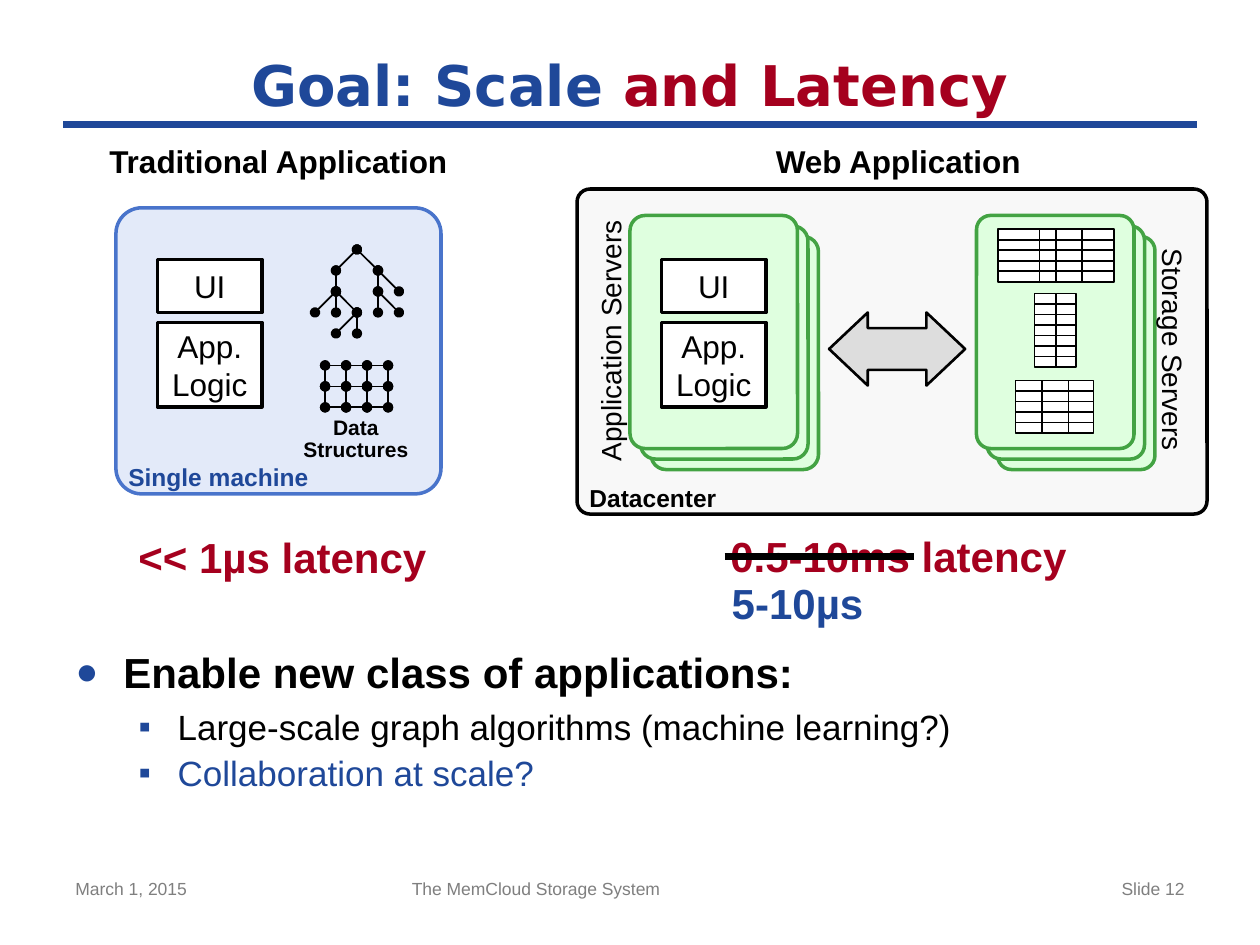
from lxml import etree
from pptx import Presentation
from pptx.dml.color import RGBColor
from pptx.enum.shapes import MSO_CONNECTOR, MSO_SHAPE
from pptx.enum.text import MSO_ANCHOR, MSO_AUTO_SIZE, PP_ALIGN
from pptx.oxml.ns import qn
from pptx.util import Inches, Pt

LINE = MSO_CONNECTOR.STRAIGHT
RECT, ROUND = MSO_SHAPE.RECTANGLE, MSO_SHAPE.ROUNDED_RECTANGLE
ARROW = MSO_SHAPE.LEFT_RIGHT_ARROW
LEFT, CENTER, RIGHT = PP_ALIGN.LEFT, PP_ALIGN.CENTER, PP_ALIGN.RIGHT
TOP, MIDDLE = MSO_ANCHOR.TOP, MSO_ANCHOR.MIDDLE

BLUE, RED, BLACK, WHITE, GREY = "1F4899", "A5001E", "000000", "FFFFFF", "7F7F7F"

# Content
TITLE = [("Goal: Scale ", BLUE), ("and Latency", RED)]
# text, level, size, bold, colour, bullet, indent, hanging, space before
BULLETS = [
    ("Enable new class of applications:", 0, 24, True, BLACK, "●", 0.38, 0.38, 6),
    ("Large-scale graph algorithms (machine learning?)", 1, 20, False, BLACK, "▪", 0.81, 0.31, 5),
    ("Collaboration at scale?", 1, 20, False, BLUE, "▪", 0.81, 0.31, 2),
]
# text, box, alignment, size, bold, colour
FOOTERS = [
    ("March 1, 2015", (0.5, 6.92, 2.33, 0.43), LEFT, 10, False, GREY),
    ("The MemCloud Storage System", (3.17, 6.92, 3.75, 0.43), LEFT, 10, False, GREY),
    ("Slide 12", (7.17, 6.92, 2.33, 0.43), RIGHT, 10, False, GREY),
]
HEADINGS = [
    ("Traditional Application", (0.75, 1.08, 2.92, 0.4), CENTER, 18, True, BLACK),
    ("Web Application", (5.76, 1.08, 2.74, 0.4), CENTER, 18, True, BLACK),
    ("<< 1µs latency", (1, 4.17, 2.49, 0.5), LEFT, 24, True, RED),
    ("0.5-10ms latency", (5.67, 4.16, 2.92, 0.5), CENTER, 24, True, RED),
]
# text, top, height
APP_PARTS = [("UI", 2.06, 0.42), ("App.\nLogic", 2.56, 0.67)]
# left, top, width, column offsets, rows
STORED_TABLES = [
    (7.92, 1.82, 0.92, (0.33, 0.46, 0.67), 5),
    (8.21, 2.33, 0.33, (0.17,), 7),
    (8.06, 3.02, 0.62, (0.21, 0.42), 5),
]
# Data structures, as (column, row) pairs on a grid
STEP = 1 / 6
TREE = [
    ((2, 0), (1, 1)), ((2, 0), (3, 1)), ((1, 1), (1, 2)), ((3, 1), (3, 2)),
    ((3, 1), (4, 2)), ((1, 2), (0, 3)), ((1, 2), (1, 3)), ((1, 2), (2, 3)),
    ((3, 2), (3, 3)), ((3, 2), (4, 3)), ((2, 3), (1, 4)), ((2, 3), (2, 4)),
]
COLS, ROWS = 4, 3
LATTICE = [((c, r), (c + 1, r)) for r in range(ROWS) for c in range(COLS - 1)]
LATTICE += [((c, r), (c, r + 1)) for r in range(ROWS - 1) for c in range(COLS)]


def rgb(color):
    return RGBColor.from_string(color)


def add_run(p, text, size, bold, color, font="Arial"):
    r = p.add_run()
    r.text = text
    for name, value in {"size": Pt(size), "bold": bold, "name": font}.items():
        setattr(r.font, name, value)
    r.font.color.rgb = rgb(color)


def write(sp, text, align, size, bold, color, wrap=True, anchor=TOP, inset=None, spacing=None):
    tf = sp.text_frame
    tf.word_wrap = wrap
    tf.vertical_anchor = anchor
    if inset is not None:
        for name, value in zip(("left", "top", "right", "bottom"), inset):
            setattr(tf, "margin_" + name, Inches(value))
    p = tf.paragraphs[0]
    p.alignment = align
    if spacing:
        p.line_spacing = spacing
    for i, part in enumerate(text.split("\n")):
        if i:
            p.add_line_break()
        add_run(p, part, size, bold, color)


def label(text, box, *args, rotation=0, **kwargs):
    sp = shapes.add_textbox(*map(Inches, box))
    sp.rotation = rotation
    write(sp, text, *args, **kwargs)


def block(kind, box, fill, line, width, adj=()):
    sp = shapes.add_shape(kind, *map(Inches, box))
    sp.shadow.inherit = False
    sp.fill.solid()
    sp.fill.fore_color.rgb = rgb(fill)
    sp.line.color.rgb = rgb(line)
    sp.line.width = Pt(width)
    for i, value in enumerate(adj):
        sp.adjustments[i] = value
    return sp


def line(x1, y1, x2, y2, width=1, color=BLACK, dots=False):
    cx = shapes.add_connector(LINE, *map(Inches, (x1, y1, x2, y2)))
    cx.line.color.rgb = rgb(color)
    cx.line.width = Pt(width)
    if dots:
        ln = cx.line._get_or_add_ln()
        for end in ("a:headEnd", "a:tailEnd"):
            etree.SubElement(ln, qn(end), type="oval")
    etree.SubElement(cx._element.spPr, qn("a:effectLst"))


def set_bullet(p, char, indent, hanging, size):
    pPr = p._p.get_or_add_pPr()
    pPr.set("marL", str(Inches(indent)))
    pPr.set("indent", str(-Inches(hanging)))
    clr = etree.SubElement(pPr, qn("a:buClr"))
    etree.SubElement(clr, qn("a:srgbClr"), val=BLUE)
    etree.SubElement(pPr, qn("a:buSzPct"), val=str(size * 1000))
    etree.SubElement(pPr, qn("a:buFont"), typeface="Arial")
    etree.SubElement(pPr, qn("a:buChar"), char=char)


def place(sp, box, anchor):
    for name, value in zip(("left", "top", "width", "height"), box):
        setattr(sp, name, Inches(value))
    sp.text_frame.auto_size = MSO_AUTO_SIZE.NONE
    sp.text_frame.vertical_anchor = anchor
    return sp.text_frame


def app_parts(left):
    for text, top, height in APP_PARTS:
        sp = block(RECT, (left, top, 0.83, height), WHITE, BLACK, 2)
        write(sp, text, CENTER, 18, False, BLACK, wrap=False, anchor=MIDDLE)


def card_stack(left, width):
    for i in (2, 1, 0):
        box = (left + i / 12, 1.71 + i / 12, width, 1.85)
        block(ROUND, box, "DFFFDF", "43A343", 2, [0.09])


def graph(edges, left, top):
    for start, end in edges:
        line(*(o + v * STEP for o, v in zip((left, top) * 2, start + end)), dots=True)


prs = Presentation()
prs.slide_width, prs.slide_height = Inches(10), Inches(7.5)
slide = prs.slides.add_slide(prs.slide_layouts[1])
shapes = slide.shapes

# Title, rule and footers
p = place(shapes.title, (0.5, 0.33, 9, 0.67), MIDDLE).paragraphs[0]
p.alignment = CENTER
for text, color in TITLE:
    add_run(p, text, 32, True, color, "DejaVu Sans")
line(0.5, 0.99, 9.5, 0.99, 4, BLUE)
for item in FOOTERS:
    label(*item)

# Bullet list
tf = place(slide.placeholders[1], (0.5, 5.08, 9, 2.18), TOP)
for i, (text, level, size, bold, color, char, indent, hanging, before) in enumerate(BULLETS):
    p = tf.add_paragraph() if i else tf.paragraphs[0]
    p.level = level
    p.space_before = Pt(before)
    set_bullet(p, char, indent, hanging, 100 if level else 90)
    add_run(p, text, size, bold, color)

# Headings and latencies
for item in HEADINGS:
    label(*item)
label("5-10µs", (5.8, 4.58, 1.06, 0.4), CENTER, 24, True, BLUE, wrap=False, inset=(0, 0, 0, 0))
line(5.75, 4.42, 7.25, 4.42, 4)

# Datacenter
block(ROUND, (4.58, 1.5, 5, 2.58), "F8F8F8", BLACK, 2, [0.04])
card_stack(7.75, 1.25)
card_stack(5, 1.33)
app_parts(5.25)
for left, top, width, cols, rows in STORED_TABLES:
    height = rows / 12
    block(RECT, (left, top, width, height), WHITE, BLACK, 1)
    for x in cols:
        line(left + x, top, left + x, top + height)
    for row in range(1, rows):
        y = top + row / 12
        line(left, y, left + width, y)
label("Application Servers", (3.72, 2.52, 2.25, 0.37), CENTER, 16, False, BLACK, rotation=270)
label("Storage Servers", (8.27, 2.59, 2.08, 0.37), CENTER, 16, False, BLACK, rotation=90)
block(ARROW, (6.58, 2.48, 1.08, 0.58), "DDDDDD", BLACK, 1.5, [0.57, 0.53])
tag = {"wrap": False, "inset": (0.1, 0, 0.1, 0)}
label("Datacenter", (4.58, 3.83, 1.21, 0.24), LEFT, 14, True, BLACK, **tag)

# Single machine
block(ROUND, (0.92, 1.65, 2.58, 2.27), "E3EAF9", "4974CB", 2, [0.09])
app_parts(1.25)
graph(TREE, 2.5, 1.98)
graph(LATTICE, 2.58, 2.9)
caption = {"wrap": False, "inset": (0.02, 0.05, 0.02, 0.05), "spacing": 0.9}
label("Data\nStructures", (2.31, 3.26, 1.03, 0.46), CENTER, 12, True, BLACK, **caption)
label("Single machine", (0.92, 3.67, 1.64, 0.24), LEFT, 14, True, BLUE, **tag)

prs.save("out.pptx")
